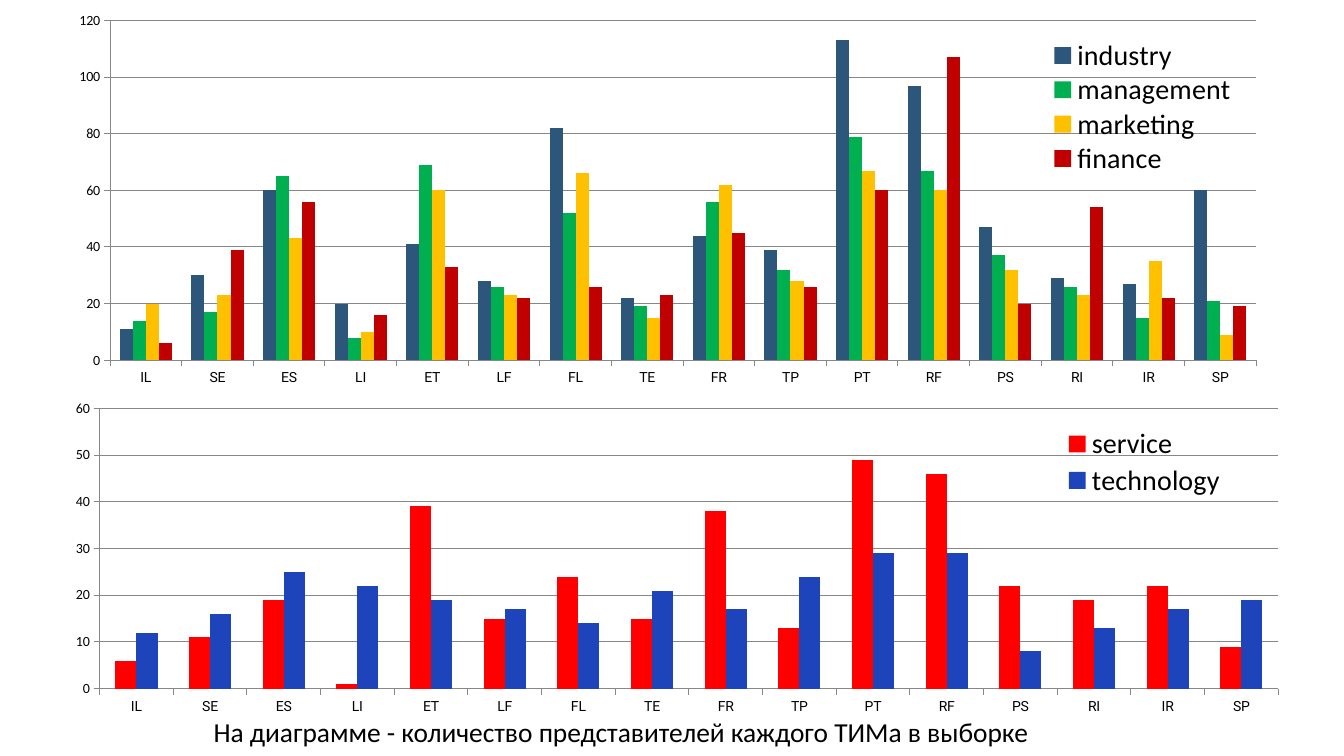
from lxml import etree
from pptx import Presentation
from pptx.chart.data import CategoryChartData
from pptx.dml.color import RGBColor
from pptx.enum.chart import XL_CHART_TYPE, XL_LEGEND_POSITION, XL_TICK_MARK
from pptx.enum.shapes import MSO_SHAPE
from pptx.enum.text import MSO_ANCHOR, PP_ALIGN
from pptx.oxml.ns import qn
from pptx.util import Inches, Pt

TYPES = ["IL", "SE", "ES", "LI", "ET", "LF", "FL", "TE",
         "FR", "TP", "PT", "RF", "PS", "RI", "IR", "SP"]
BUSINESS = [
    ("industry", "2C567A", [11, 30, 60, 20, 41, 28, 82, 22, 44, 39, 113, 97, 47, 29, 27, 60]),
    ("management", "00B050", [14, 17, 65, 8, 69, 26, 52, 19, 56, 32, 79, 67, 37, 26, 15, 21]),
    ("marketing", "FFC000", [20, 23, 43, 10, 60, 23, 66, 15, 62, 28, 67, 60, 32, 23, 35, 9]),
    ("finance", "C00000", [6, 39, 56, 16, 33, 22, 26, 23, 45, 26, 60, 107, 20, 54, 22, 19]),
]
SERVICES = [
    ("service", "FF0000", [6, 11, 19, 1, 39, 15, 24, 15, 38, 13, 49, 46, 22, 19, 22, 9]),
    ("technology", "1E44BC", [12, 16, 25, 22, 19, 17, 14, 21, 17, 24, 29, 29, 8, 13, 17, 19]),
]


def rgb(color):
    """Turn a hex string into a colour."""
    return RGBColor.from_string(color)


def set_font(font, size, name="Calibri", color="000000"):
    """Format a font."""
    font.size, font.name, font.bold = Pt(size), name, False
    font.color.rgb = rgb(color)


def add_text(tf, text, size=20, align=PP_ALIGN.LEFT, **fmt):
    """Write one formatted line into a text frame."""
    p = tf.paragraphs[0]
    p.alignment = align
    r = p.add_run()
    r.text = text
    set_font(r.font, size, **fmt)


def make_layout(box, inner=False):
    """Build a manual chart layout from fractions of the chart's size."""
    layout = etree.Element(qn("c:layout"))
    manual = etree.SubElement(layout, qn("c:manualLayout"))
    if inner:
        etree.SubElement(manual, qn("c:layoutTarget")).set("val", "inner")
    for tag in ("xMode", "yMode"):
        etree.SubElement(manual, qn(f"c:{tag}")).set("val", "edge")
    for tag, value in zip("xywh", box):
        etree.SubElement(manual, qn(f"c:{tag}")).set("val", str(value))
    return layout


def clear_background(chart_area):
    """Make the chart's background transparent and borderless."""
    props = etree.Element(qn("c:spPr"))
    etree.SubElement(props, qn("a:noFill"))
    etree.SubElement(etree.SubElement(props, qn("a:ln")), qn("a:noFill"))
    chart_area.addnext(props)


def add_columns(slide, box, series, top, step, plot_box, legend_box):
    """Draw a clustered column chart with its legend over the plot."""
    data = CategoryChartData()
    data.categories = TYPES
    for name, _, values in series:
        data.add_series(name, values)
    chart = slide.shapes.add_chart(
        XL_CHART_TYPE.COLUMN_CLUSTERED, *map(Inches, box), data).chart
    chart.has_title = False
    set_font(chart.font, 10)

    plot = chart.plots[0]
    plot.gap_width, plot.overlap, plot.vary_by_categories = 150, 0, False
    for item, (_, color, _) in zip(plot.series, series):
        item.format.fill.solid()
        item.format.fill.fore_color.rgb = rgb(color)

    cat, val = chart.category_axis, chart.value_axis
    val.minimum_scale, val.maximum_scale, val.major_unit = 0, top, step
    val.has_major_gridlines = True
    for axis in (cat, val):
        axis.major_tick_mark = XL_TICK_MARK.OUTSIDE
        axis.minor_tick_mark = XL_TICK_MARK.NONE
    for line in (cat.format.line, val.format.line, val.major_gridlines.format.line):
        line.color.rgb = rgb("878787")
        line.width = Pt(0.75)
    set_font(cat.tick_labels.font, 10, name="Roboto")

    chart.has_legend = True
    legend = chart.legend
    legend.position = XL_LEGEND_POSITION.RIGHT
    legend.include_in_layout = True
    set_font(legend.font, 20)

    area = plot._element.getparent()
    for parent in (area, legend._element):
        for old in parent.findall(qn("c:layout")):
            parent.remove(old)
    area.insert(0, make_layout(plot_box, inner=True))
    legend._element.find(qn("c:overlay")).addprevious(make_layout(legend_box))
    clear_background(area.getparent())


def add_caption(slide, box, text):
    """Place the caption on a slightly transparent white band."""
    sp = slide.shapes.add_shape(MSO_SHAPE.RECTANGLE, *map(Inches, box))
    sp.shadow.inherit = False
    sp.line.fill.background()
    sp.fill.solid()
    sp.fill.fore_color.rgb = rgb("FFFFFF")
    color = sp._element.spPr.find(f"{qn('a:solidFill')}/{qn('a:srgbClr')}")
    etree.SubElement(color, qn("a:alpha")).set("val", "90000")
    tf = sp.text_frame
    tf.word_wrap = True
    tf.vertical_anchor = MSO_ANCHOR.MIDDLE
    add_text(tf, text, size=19.6)


def main():
    """Build the slide with the caption band behind the charts and save it."""
    prs = Presentation()
    prs.slide_width, prs.slide_height = Inches(13.33), Inches(7.5)
    slide = prs.slides.add_slide(prs.slide_layouts[6])
    add_caption(slide, (2.02, 7.04, 9, 0.44),
                "На диаграмме - количество представителей каждого ТИМа в выборке")
    add_columns(slide, (0.43, 0.02, 12.25, 3.99), BUSINESS, 120, 20,
                (0.054, 0.046, 0.928, 0.845), (0.81, 0.09, 0.16, 0.34))
    add_columns(slide, (0.43, 3.88, 12.41, 3.36), SERVICES, 60, 10,
                (0.045, 0.051, 0.942, 0.828), (0.81, 0.1, 0.14, 0.22))
    prs.save("out.pptx")


if __name__ == "__main__":
    main()
